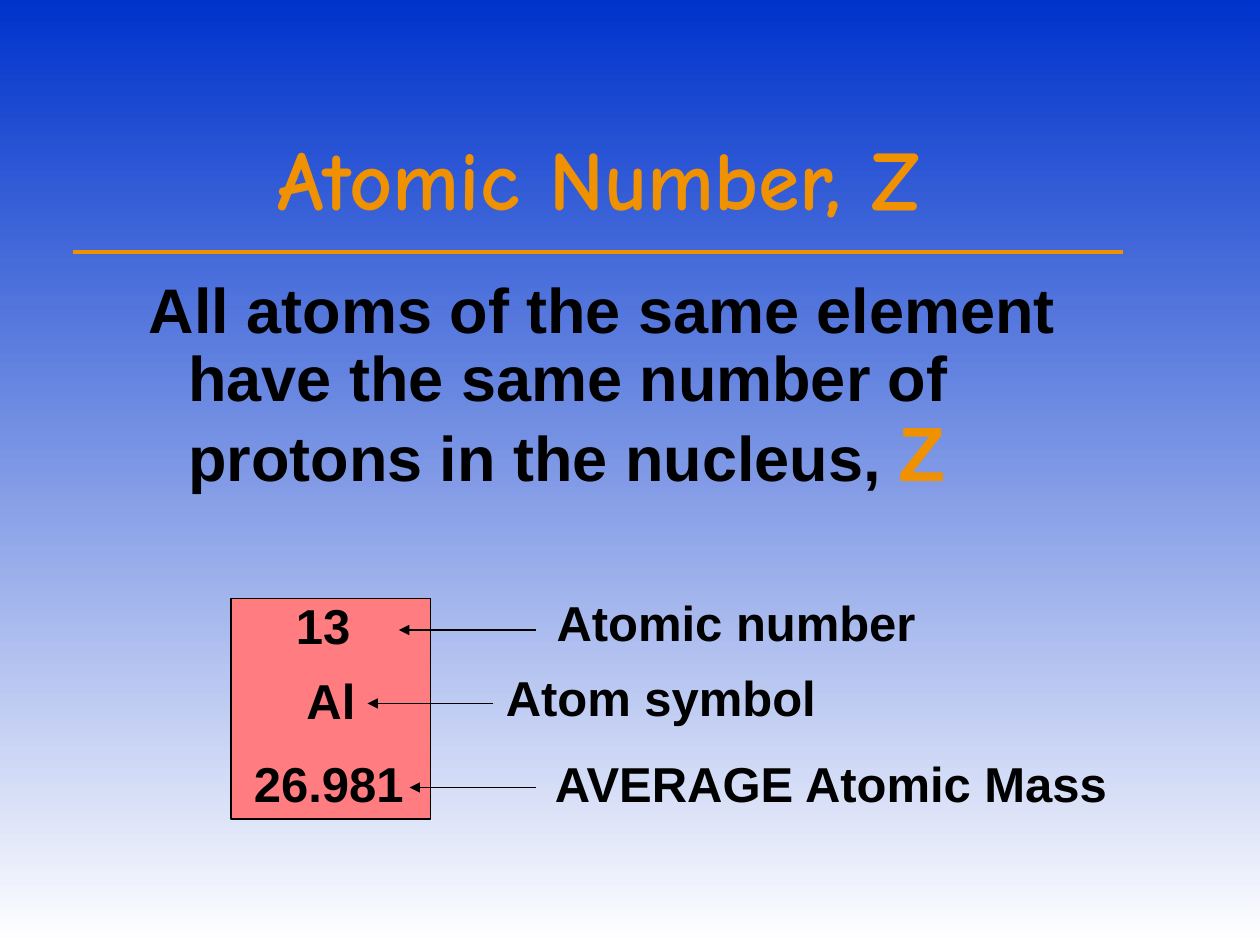
from dataclasses import dataclass

from lxml.etree import SubElement
from pptx import Presentation
from pptx.dml.color import RGBColor as RGB
from pptx.enum.shapes import MSO_CONNECTOR as Connector, MSO_SHAPE as Shape
from pptx.enum.text import MSO_ANCHOR as Anchor, MSO_AUTO_SIZE as AutoSize, PP_ALIGN as Align
from pptx.oxml.ns import qn
from pptx.util import Pt


@dataclass(frozen=True)
class Theme:
    sky: RGB = RGB(0x00, 0x33, 0xCC)
    white: RGB = RGB(0xFF, 0xFF, 0xFF)
    accent: RGB = RGB(0xEF, 0x91, 0x00)
    ink: RGB = RGB(0x00, 0x00, 0x00)
    tile: RGB = RGB(0xFF, 0x7C, 0x80)
    title_font: str = "Comic Neue"
    body_font: str = "Arial"
    title_size: int = 48
    body_size: int = 36
    symbol_size: int = 44
    label_size: int = 28
    rule_width: float = 2.25
    thin_width: float = 1


def apply(target, formats):
    for attribute, value in formats.items():
        setattr(target, attribute, value)


class SlideBuilder:
    def __init__(self, slide, theme):
        self.slide = slide
        self.shapes = slide.shapes
        self.theme = theme

    def background(self):
        fill = self.slide.background.fill
        fill.gradient()
        fill.gradient_angle = 270
        for stop, color in zip(fill.gradient_stops, (self.theme.sky, self.theme.white)):
            stop.color.rgb = color

    def text(self, box, runs, frame_format, paragraph_format=None):
        """Add one paragraph; each run is (text, font name, size, colour)."""
        holder = self.shapes.add_textbox(*map(Pt, box))
        apply(holder.text_frame, frame_format)
        paragraph = holder.text_frame.paragraphs[0]
        apply(paragraph, paragraph_format or {})
        for words, name, size, color in runs:
            run = paragraph.add_run()
            run.text = words
            apply(run.font, {"name": name, "size": Pt(size), "bold": True})
            run.font.color.rgb = color
        return holder

    def title(self, box, words):
        theme = self.theme
        self.text(box, [(words, theme.title_font, theme.title_size, theme.accent)],
                  {"word_wrap": True, "vertical_anchor": Anchor.MIDDLE},
                  {"alignment": Align.CENTER, "line_spacing": 0.9})

    def statement(self, box, words, symbol, hanging):
        theme = self.theme
        holder = self.text(box, [(words, theme.body_font, theme.body_size, theme.ink),
                                 (symbol, theme.body_font, theme.symbol_size, theme.accent)],
                           {"word_wrap": True}, {"line_spacing": 0.9})
        properties = holder.text_frame.paragraphs[0]._p.get_or_add_pPr()
        properties.set("marL", str(Pt(hanging)))
        properties.set("indent", str(-Pt(hanging)))

    def label(self, left, top, width, words):
        theme = self.theme
        return self.text((left, top, width, 41),
                         [(words, theme.body_font, theme.label_size, theme.ink)],
                         {"word_wrap": False, "auto_size": AutoSize.SHAPE_TO_FIT_TEXT})

    def line(self, start, end, y, color, width, arrow=False):
        line = self.shapes.add_connector(Connector.STRAIGHT, *map(Pt, (start, y, end, y)))
        line.line.color.rgb = color
        line.line.width = Pt(width)
        if arrow:
            SubElement(line.line._get_or_add_ln(), qn("a:tailEnd"), type="triangle")
        SubElement(line._element.spPr, qn("a:effectLst"))
        return line

    def tile(self, box):
        tile = self.shapes.add_shape(Shape.RECTANGLE, *map(Pt, box))
        tile.shadow.inherit = False
        tile.fill.solid()
        tile.fill.fore_color.rgb = self.theme.tile
        tile.line.color.rgb = self.theme.ink
        tile.line.width = Pt(self.theme.thin_width)

    def callout(self, start, end, y, label):
        """Group a label with the arrow that points from it into the tile."""
        arrow = self.line(start, end, y, self.theme.ink, self.theme.thin_width, arrow=True)
        self.shapes.add_group_shape([arrow, self.label(*label)])


def main():
    deck = Presentation()
    deck.slide_width, deck.slide_height = Pt(720), Pt(540)
    theme = Theme()
    page = SlideBuilder(deck.slides.add_slide(deck.slide_layouts[6]), theme)

    page.background()
    page.title((60, 60, 564, 90), "Atomic Number, Z")
    page.statement((78, 156, 564, 138),
                   "All atoms of the same element have the same number of protons in the nucleus, ",
                   "Z", hanging=22.5)
    page.line(42, 642, 144, theme.accent, theme.rule_width)

    page.tile((132, 342, 114, 126))
    for entry in ((162, 337, 46, "13"), (168, 379.5, 42.5, "Al"), (138, 427, 100, "26.981")):
        page.label(*entry)

    callouts = (
        (306, 228, 360, (311, 335, 220.5, "Atomic number")),
        (282, 210, 402, (282, 378, 192, "Atom symbol")),
        (306, 234, 450, (310, 427, 333.5, "AVERAGE Atomic Mass")),
    )
    for callout in callouts:
        page.callout(*callout)

    deck.save("out.pptx")


if __name__ == "__main__":
    main()
